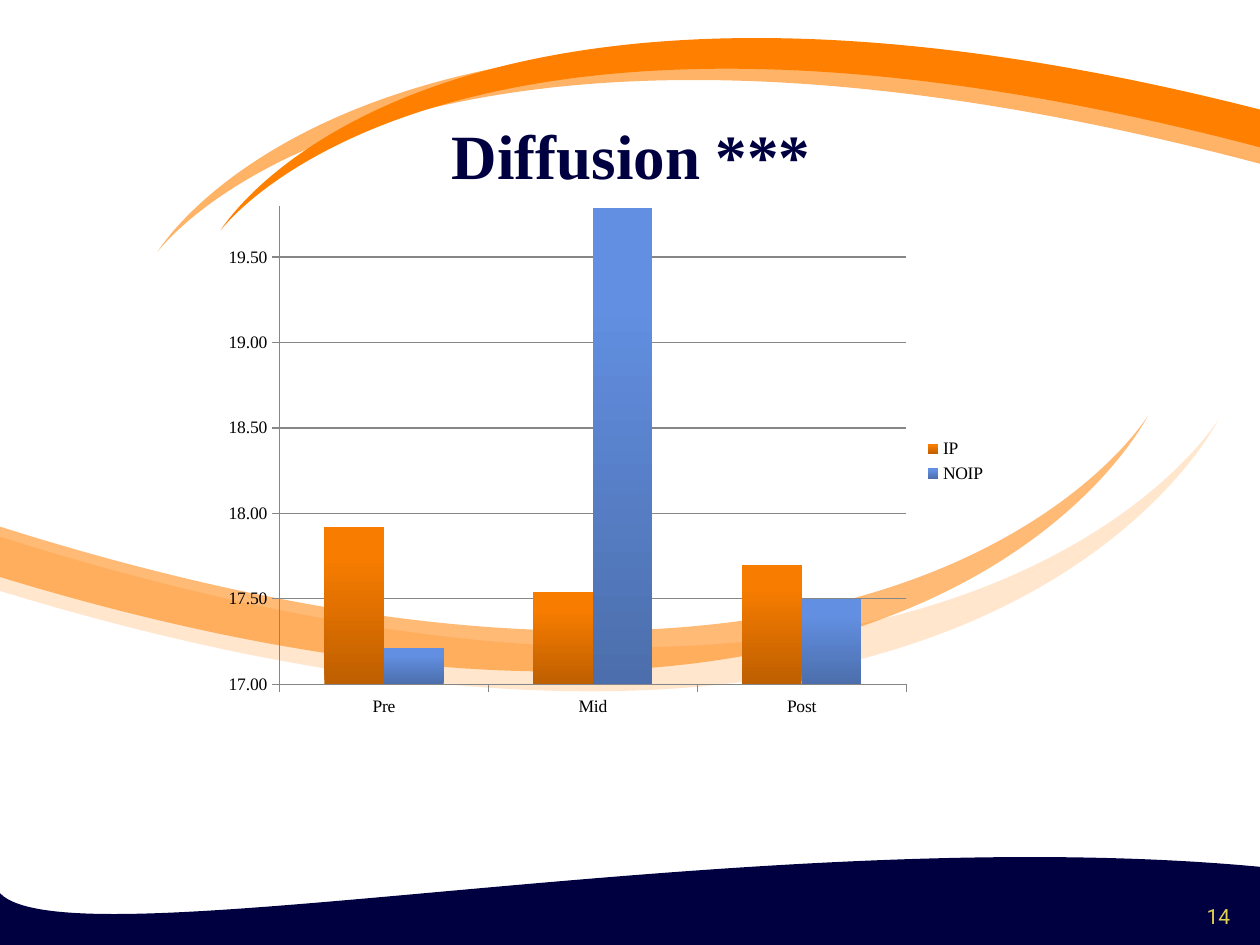
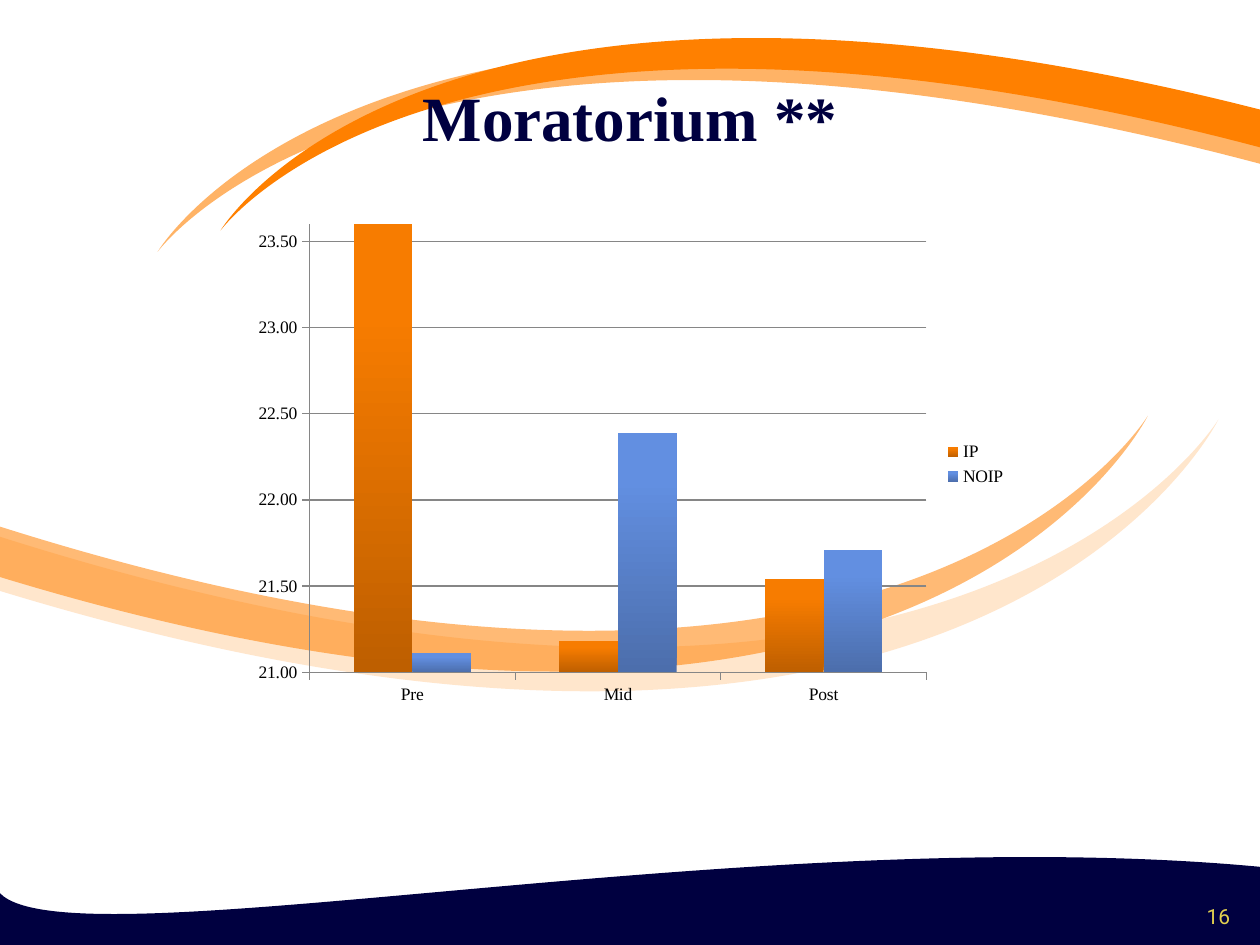
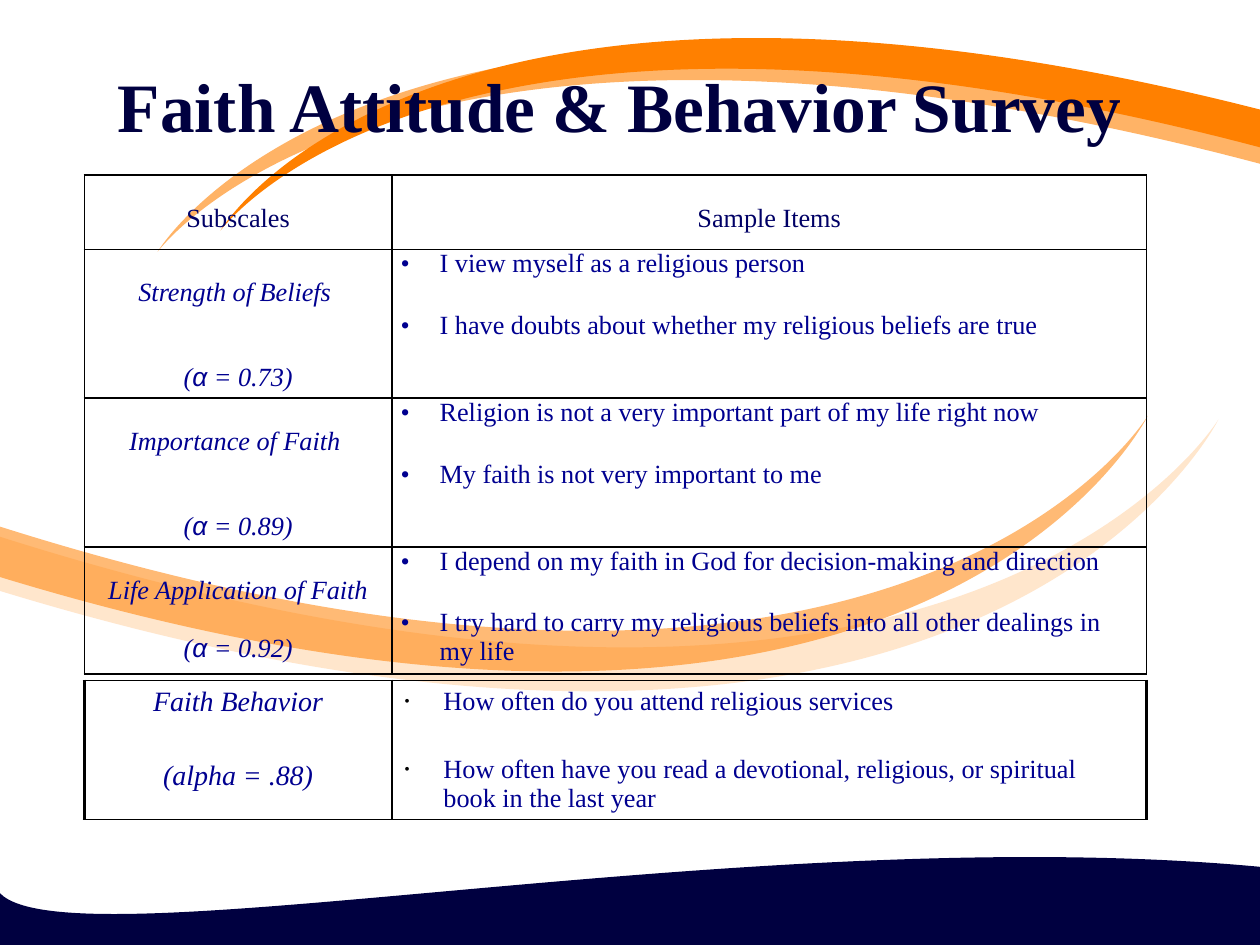
"""Build three survey result slides with shared waves, titles and numbers."""
from dataclasses import dataclass
from typing import Any

from lxml import etree
from pptx import Presentation
from pptx.chart.data import CategoryChartData
from pptx.dml.color import RGBColor
from pptx.enum.chart import XL_CHART_TYPE, XL_LEGEND_POSITION, XL_TICK_MARK
from pptx.enum.text import MSO_ANCHOR, MSO_AUTO_SIZE, PP_ALIGN
from pptx.oxml.ns import qn
from pptx.util import Inches, Pt

CENTER, RIGHT = PP_ALIGN.CENTER, PP_ALIGN.RIGHT
MIDDLE, BOTTOM = MSO_ANCHOR.MIDDLE, MSO_ANCHOR.BOTTOM
NO_AUTOFIT = MSO_AUTO_SIZE.NONE
COLUMNS = XL_CHART_TYPE.COLUMN_CLUSTERED
LEGEND_RIGHT = XL_LEGEND_POSITION.RIGHT
TICK_OUT = XL_TICK_MARK.OUTSIDE

NAVY, ORANGE, BLUE, BLACK, GRAY = "000040", "FF8000", "7598D9", "000000", "868686"
HEADING_INK, CELL_INK, GOLD = "000066", "000090", "E1CF50"
SERIF = "Times New Roman"
BAR_STOPS = ((0, 51000), (0.8, 93000))
TITLE_ONLY = 5

TITLE_FONT = {"name": SERIF, "size": Pt(36), "bold": True}
NUMBER_FONT = {"name": "Roboto", "size": Pt(12)}
CHART_FONT = {"name": SERIF, "size": Pt(10)}
CELL_FONT = {"name": SERIF, "size": Pt(15), "italic": False}
SUBSCALE_FONT = CELL_FONT | {"italic": True}
BEHAVIOR_FONT = SUBSCALE_FONT | {"size": Pt(16)}

SUBSCALE_LINES = {"alignment": CENTER, "line_spacing": 2.0,
                  "space_before": Pt(12), "space_after": Pt(3)}
HEADING_LINES = {"alignment": CENTER, "line_spacing": 2.0}

Box = tuple[float, float, float, float]
Point = tuple[float, float]


@dataclass(frozen=True)
class Wave:
    """A closed outline: three points make a curve, one makes a line."""
    color: str
    start: Point
    segments: tuple[tuple[Point, ...], ...]
    alpha: int = 100


@dataclass(frozen=True)
class Result:
    """One status score, charted for both groups over time."""
    title: str
    number: str
    title_at: Point
    chart_box: Box
    limits: Point
    ip: tuple[float, ...]
    noip: tuple[float, ...]


@dataclass(frozen=True)
class Subscale:
    """A subscale's lines and its sample items."""
    lines: tuple[str, ...]
    items: tuple[str, ...]
    height: float


@dataclass(frozen=True)
class Bullet:
    """The bullet's look and the gap between items."""
    gap: float
    color: str = CELL_INK
    percent: int = 100


WAVES = (
    Wave(NAVY, (0, 7.09), (((0.56, 7.67), (5.96, 6.5), (10, 6.88)),
                           ((10, 7.09), (10.01, 7.32), (10.01, 7.54)),
                           ((0, 7.51),), ((0, 7.09),))),
    Wave("FFE6CC", (0, 4.26), (((7.63, 6.68), (9.67, 3.33), (9.67, 3.33)),
                               ((9.67, 3.33), (7.82, 7.08), (0, 4.69)),
                               ((0, 4.69), (0, 4.63), (0, 4.26)))),
    Wave("FFB366", (10, 1.3), (((3.09, -0.53), (1.25, 2), (1.25, 2)),
                               ((1.25, 2), (2.92, -0.83), (10, 0.97)),
                               ((10, 0.97), (10, 1.02), (10, 1.3)))),
    Wave(ORANGE, (10, 1.17), (((3.49, -0.55), (1.75, 1.83), (1.75, 1.83)),
                              ((1.75, 1.83), (3.33, -0.83), (10, 0.87)),
                              ((10, 0.87), (10, 0.91), (10, 1.17)))),
    Wave(ORANGE, (0, 4.18), (((7.2, 6.46), (9.11, 3.3), (9.11, 3.3)),
                             ((9.11, 3.3), (7.37, 6.83), (0, 4.58)),
                             ((0, 4.58), (0, 4.53), (0, 4.18))), 54),
)

RESULTS = (
    Result("Diffusion ***", "14", (0.51, 0.6), (1.69, 1.55, 6.24, 4.22),
           (17, 19.8), (17.92, 17.54, 17.7), (17.21, 19.79, 17.5)),
    Result("Moratorium **", "16", (0.5, 0.3), (1.93, 1.7, 6.16, 3.97),
           (21, 23.6), (23.61, 21.18, 21.54), (21.11, 22.39, 21.71)),
)

SUBSCALES = (
    Subscale(("Strength of Beliefs ", "(α = 0.73)"),
             ("I view myself as a religious person",
              "I have doubts about whether my religious beliefs are true"), 1.18),
    Subscale(("Importance of Faith ", "(α = 0.89)"),
             ("Religion is not a very important part of my life right now",
              "My faith is not very important to me"), 1.18),
    Subscale(("Life Application of Faith (α = 0.92)",),
             ("I depend on my faith in God for decision-making and direction",
              "I try hard to carry my religious beliefs into all other dealings in my life"),
             1.01),
)
BEHAVIOR = Subscale(
    ("Faith Behavior", "(alpha = .88)"),
    ("How often do you attend religious services",
     "How often have you read a devotional, religious, or spiritual book in the last year"),
    1.1)


def rgb(color: str) -> RGBColor:
    """Turn a hex string into a colour."""
    return RGBColor.from_string(color)


def apply(target: Any, values: dict[str, Any]) -> None:
    """Set each named attribute on the target."""
    for name, value in values.items():
        setattr(target, name, value)


def style_font(font: Any, values: dict[str, Any], color: str) -> None:
    """Format a font and colour it."""
    apply(font, values)
    font.color.rgb = rgb(color)


def bend(sp: Any, wave: Wave) -> None:
    """Turn each run of three line points into one cubic curve."""
    lines = iter(list(sp.element.iter(qn("a:lnTo"))))
    for segment in wave.segments:
        parts = [next(lines) for _ in segment]
        if len(parts) == 3:
            curve = etree.Element(qn("a:cubicBezTo"))
            parts[0].addprevious(curve)
            for part in parts:
                curve.append(part[0])
                part.getparent().remove(part)


def draw_wave(s: Any, wave: Wave) -> Any:
    """Draw one filled wave and return its shape."""
    points = [wave.start] + [point for segment in wave.segments for point in segment]
    outline = [(Inches(x), Inches(y)) for x, y in points]
    builder = s.shapes.build_freeform(*outline[0])
    builder.add_line_segments(outline[1:], close=True)
    sp = builder.convert_to_shape()
    bend(sp, wave)
    sp.shadow.inherit = False
    sp.fill.solid()
    sp.fill.fore_color.rgb = rgb(wave.color)
    sp.line.fill.background()
    if wave.alpha < 100:
        color = sp.element.spPr.find(".//" + qn("a:srgbClr"))
        etree.SubElement(color, qn("a:alpha"), val=str(wave.alpha * 1000))
    return sp


def share_waves(s: Any) -> None:
    """Put the waves behind everything on the slide's master."""
    tree = s.slide_layout.slide_master.element.cSld.spTree
    for i, wave in enumerate(WAVES):
        element = draw_wave(s, wave).element
        element.nvSpPr.cNvPr.set("id", str(100 + i))
        tree.insert(2 + i, element)


def set_title(s: Any, text: str, at: Point, align: Any = CENTER, size: float = 36) -> None:
    """Place and format the title placeholder."""
    sp = s.shapes.title
    apply(sp, {"left": Inches(at[0]), "top": Inches(at[1]),
               "width": Inches(9), "height": Inches(1.25)})
    tf = sp.text_frame
    apply(tf, {"text": text, "auto_size": NO_AUTOFIT, "vertical_anchor": MIDDLE})
    p = tf.paragraphs[0]
    p.alignment = align
    style_font(p.runs[0].font, TITLE_FONT | {"size": Pt(size)}, NAVY)


def add_number(s: Any, number: str) -> None:
    """Write the slide number in the bottom band."""
    sp = s.shapes.add_textbox(Inches(9.42), Inches(6.9), Inches(0.5), Inches(0.52))
    tf = sp.text_frame
    apply(tf, {"text": number, "word_wrap": True, "vertical_anchor": BOTTOM})
    p = tf.paragraphs[0]
    p.alignment = CENTER
    style_font(p.runs[0].font, NUMBER_FONT, GOLD)


def shade_bars(series: Any, color: str) -> None:
    """Fill bars with a gradient from a dark to a light shade of the colour."""
    fill = series.format.fill
    fill.gradient()
    fill.gradient_angle = 90
    for stop, (position, _) in zip(fill.gradient_stops, BAR_STOPS):
        stop.color.rgb = rgb(color)
        stop.position = position
    for element, (_, shade) in zip(series._element.iter(qn("a:srgbClr")), BAR_STOPS):
        etree.SubElement(element, qn("a:shade"), val=str(shade))
        etree.SubElement(element, qn("a:satMod"), val="130000")


def add_result_chart(s: Any, result: Result) -> None:
    """Chart the scores of both groups."""
    data = CategoryChartData(number_format="###0.00")
    data.categories = ("Pre", "Mid", "Post")
    data.add_series("IP", result.ip)
    data.add_series("NOIP", result.noip)
    box = (Inches(v) for v in result.chart_box)
    chart = s.shapes.add_chart(COLUMNS, *box, data).chart
    apply(chart, {"has_title": False, "has_legend": True})
    apply(chart.legend, {"position": LEGEND_RIGHT, "include_in_layout": False})
    style_font(chart.font, CHART_FONT, BLACK)
    low, high = result.limits
    scores = chart.value_axis
    apply(scores, {"minimum_scale": low, "maximum_scale": high, "major_unit": 0.5,
                   "has_major_gridlines": True})
    apply(scores.tick_labels, {"number_format": "###0.00",
                               "number_format_is_linked": False})
    for axis in (scores, chart.category_axis):
        axis.major_tick_mark = TICK_OUT
        axis.format.line.color.rgb = rgb(GRAY)
    scores.major_gridlines.format.line.color.rgb = rgb(GRAY)
    plot = chart.plots[0]
    apply(plot, {"gap_width": 150, "vary_by_categories": False})
    for series, color in zip(plot.series, (ORANGE, BLUE)):
        shade_bars(series, color)


def add_runs(p: Any, text: str, font: dict[str, Any], color: str) -> None:
    """Add the text, with any alpha sign in Arial."""
    for part in filter(None, text.partition("α")):
        r = p.add_run()
        r.text = part
        style_font(r.font, font | ({"name": "Arial"} if part == "α" else {}), color)


def write_lines(cell: Any, lines: tuple[str, ...], font: dict[str, Any],
                layout: dict[str, Any], color: str = CELL_INK) -> None:
    """Write one paragraph for each line."""
    tf = cell.text_frame
    for i, line in enumerate(lines):
        p = tf.add_paragraph() if i else tf.paragraphs[0]
        apply(p, layout)
        add_runs(p, line, font, color)


def write_items(cell: Any, items: tuple[str, ...], bullet: Bullet) -> None:
    """Write sample items as a spaced bullet list."""
    write_lines(cell, items, CELL_FONT, {})
    indent = Inches(0.31)
    for i, p in enumerate(cell.text_frame.paragraphs):
        if i:
            p.space_before = Pt(bullet.gap)
        pPr = p._p.get_or_add_pPr()
        pPr.set("marL", str(indent))
        pPr.set("indent", str(-indent))
        color = etree.SubElement(pPr, qn("a:buClr"))
        etree.SubElement(color, qn("a:srgbClr"), val=bullet.color)
        etree.SubElement(pPr, qn("a:buSzPct"), val=str(bullet.percent * 1000))
        etree.SubElement(pPr, qn("a:buFont"), typeface=SERIF)
        etree.SubElement(pPr, qn("a:buChar"), char="•")


def add_border(cell: Any, side: str, width: float) -> None:
    """Draw one black cell border."""
    tcPr = cell._tc.get_or_add_tcPr()
    line = etree.SubElement(tcPr, qn(f"a:ln{side}"), w=str(Pt(width)))
    fill = etree.SubElement(line, qn("a:solidFill"))
    etree.SubElement(fill, qn("a:srgbClr"), val=BLACK)


def add_grid(s: Any, top: float, heights: list[float], edge: float) -> Any:
    """Add a clear two-column table whose outer sides have the edge width."""
    shape = s.shapes.add_table(len(heights), 2, Inches(0.67), Inches(top),
                               Inches(8.43), Inches(sum(heights)))
    table = shape.table
    apply(table, {"first_row": False, "horz_banding": False})
    for column, width in zip(table.columns, (2.44, 5.99)):
        column.width = Inches(width)
    for row, height in zip(table.rows, heights):
        row.height = Inches(height)
        for i, cell in enumerate(row.cells):
            widths = {"L": 1 if i else edge, "R": edge if i else 1, "T": 1, "B": 1}
            for side, width in widths.items():
                add_border(cell, side, width)
            cell.fill.background()
    return table


def add_subscale_table(s: Any) -> None:
    """Add the attitude subscales with their sample items."""
    table = add_grid(s, 1.39, [0.59] + [sub.height for sub in SUBSCALES], 1)
    margins = {"margin_left": Inches(0.07), "margin_right": Inches(0.07),
               "margin_top": 0, "margin_bottom": 0}
    for cell in table.iter_cells():
        apply(cell, margins)
    for i, heading in enumerate(("Subscales", "Sample Items")):
        write_lines(table.cell(0, i), (heading,), CELL_FONT, HEADING_LINES, HEADING_INK)
    for row, sub in enumerate(SUBSCALES, 1):
        write_lines(table.cell(row, 0), sub.lines, SUBSCALE_FONT, SUBSCALE_LINES)
        write_items(table.cell(row, 1), sub.items, Bullet(18.8))


def add_behavior_table(s: Any) -> None:
    """Add the behavior scale below the subscales."""
    table = add_grid(s, 5.4, [BEHAVIOR.height], 2.25)
    label = table.cell(0, 0)
    write_lines(label, BEHAVIOR.lines, BEHAVIOR_FONT, {"alignment": CENTER})
    label.text_frame.paragraphs[1].space_before = Pt(24.3)
    write_items(table.cell(0, 1), BEHAVIOR.items, Bullet(22.6, BLACK, 60))


def main() -> None:
    """Build and save the presentation."""
    prs = Presentation()
    apply(prs, {"slide_width": Inches(10), "slide_height": Inches(7.5)})
    layout = prs.slide_layouts[TITLE_ONLY]
    for result in RESULTS:
        s = prs.slides.add_slide(layout)
        set_title(s, result.title, result.title_at)
        add_number(s, result.number)
        add_result_chart(s, result)
    s = prs.slides.add_slide(layout)
    set_title(s, "Faith Attitude & Behavior Survey", (0, 0.21), RIGHT, 39.6)
    add_subscale_table(s)
    add_behavior_table(s)
    share_waves(s)
    prs.save("out.pptx")


if __name__ == "__main__":
    main()
